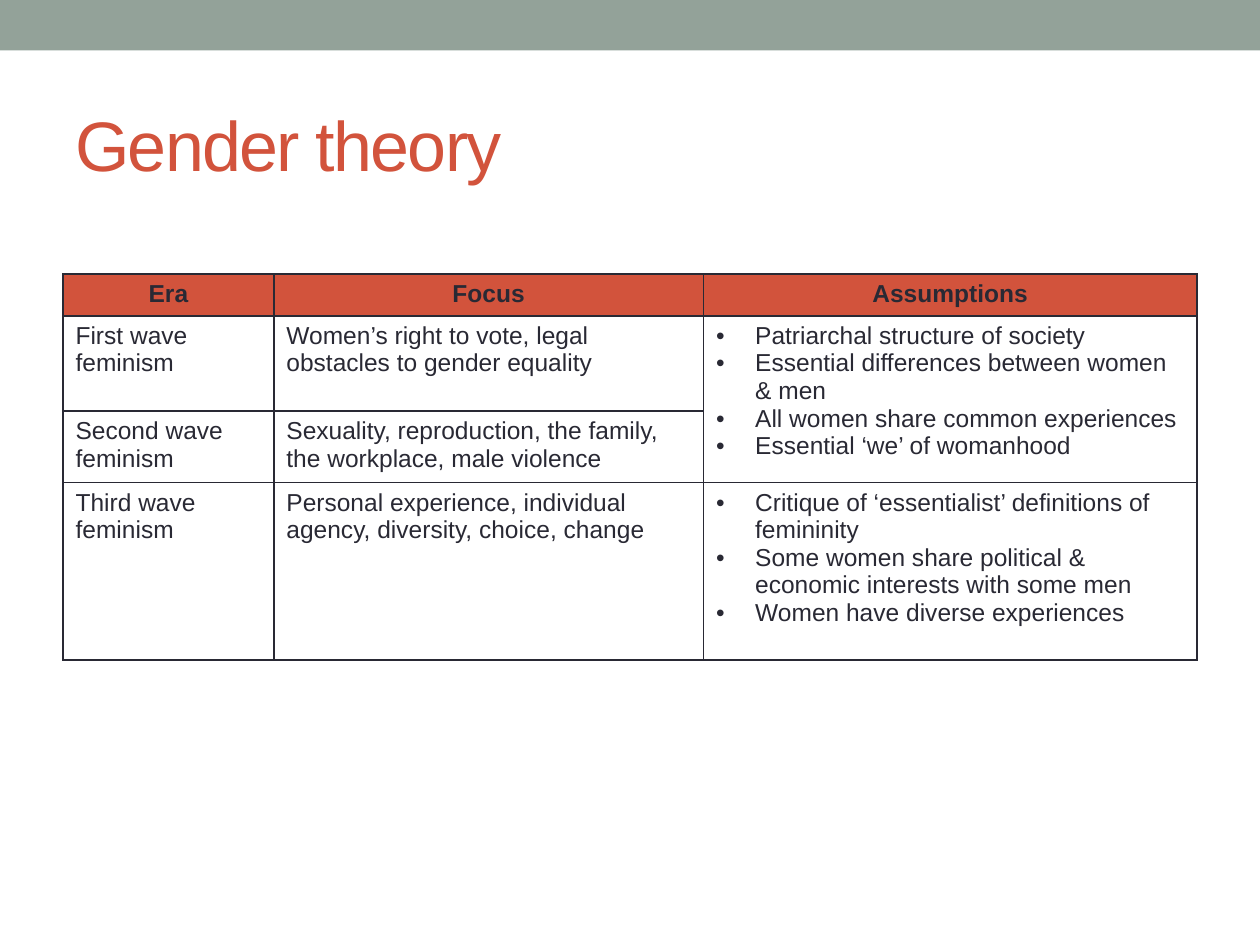
"""Build the slide with a table on the three waves of feminism."""
from lxml.etree import SubElement as Sub
from pptx import Presentation as Deck
from pptx.dml.color import RGBColor as Rgb
from pptx.enum.shapes import MSO_SHAPE as Kind
from pptx.enum.text import MSO_ANCHOR as Anchor, PP_ALIGN as Align
from pptx.oxml.ns import qn
from pptx.util import Cm, Pt

HUES = {"band": "93A299", "head": "D2533C", "ink": "292934"}
FONT = "Arial"
TITLE = "Gender theory"
HEADS = ["Era", "Focus", "Assumptions"]
WAVES = [
    ("First wave feminism",
     "Women’s right to vote, legal obstacles to gender equality",
     ["Patriarchal structure of society",
      "Essential differences between women & men",
      "All women share common experiences",
      "Essential ‘we’ of womanhood"]),
    ("Second wave feminism",
     "Sexuality, reproduction, the family, the workplace, male violence",
     []),
    ("Third wave feminism",
     "Personal experience, individual agency, diversity, choice, change",
     ["Critique of ‘essentialist’ definitions of femininity",
      "Some women share political & economic interests with some men",
      "Women have diverse experiences"]),
]
WIDTHS = [4.25, 8.66, 9.95]
HEIGHTS = [0.83, 1.92, 1.37, 3.58]


def hue(name):
    return Rgb.from_string(HUES[name])


def write(para, text, size, tint, bold=False):
    run = para.add_run()
    run.text = text
    font = run.font
    font.name, font.size, font.bold = FONT, Pt(size), bold
    font.color.rgb = hue(tint)
    return run


def bullet(para):
    props = para._p.get_or_add_pPr()
    props.set("marL", str(Cm(0.79)))
    props.set("indent", str(-Cm(0.79)))
    Sub(props, qn("a:buFont"), typeface=FONT)
    Sub(props, qn("a:buChar"), char="•")


def frame(cell):
    props = cell._tc.get_or_add_tcPr()
    for side in ("lnL", "lnR", "lnT", "lnB"):
        line = Sub(props, qn("a:" + side), w=str(Pt(1)))
        Sub(Sub(line, qn("a:solidFill")), qn("a:srgbClr"), val=HUES["ink"])


def fill(cell, item, head):
    frame(cell)
    if head:
        cell.fill.solid()
        cell.fill.fore_color.rgb = hue("head")
    else:
        cell.fill.background()
    listed = isinstance(item, list)
    body = cell.text_frame
    for i, text in enumerate(item if listed else [item]):
        para = body.add_paragraph() if i else body.paragraphs[0]
        if listed:
            bullet(para)
        para.alignment = Align.CENTER if head else Align.LEFT
        write(para, text, 14, "ink", head)


def main():
    deck = Deck()
    deck.slide_width, deck.slide_height = Cm(25.4), Cm(19.05)
    slide = deck.slides.add_slide(deck.slide_layouts[6])
    shapes = slide.shapes

    band = shapes.add_shape(Kind.RECTANGLE, 0, 0, deck.slide_width, Cm(1.02))
    band.shadow.inherit = False
    band.fill.solid()
    band.fill.fore_color.rgb = hue("band")
    band.line.fill.background()

    title = shapes.add_textbox(Cm(1.27), Cm(1.52), Cm(22.86), Cm(2.74)).text_frame
    title.word_wrap = True
    title.vertical_anchor = Anchor.MIDDLE
    run = write(title.paragraphs[0], TITLE, 40, "head")
    run.font._element.set("spc", "-100")

    rows = [HEADS, *WAVES]
    grid = shapes.add_table(len(rows), len(HEADS), Cm(1.27), Cm(5.52),
                            Cm(sum(WIDTHS)), Cm(sum(HEIGHTS))).table
    for col, width in zip(grid.columns, WIDTHS):
        col.width = Cm(width)
    for row, height in zip(grid.rows, HEIGHTS):
        row.height = Cm(height)
    for r, items in enumerate(rows):
        for c, item in enumerate(items):
            fill(grid.cell(r, c), item, r == 0)
    grid.cell(1, 2).merge(grid.cell(2, 2))

    deck.save("out.pptx")


if __name__ == "__main__":
    main()
